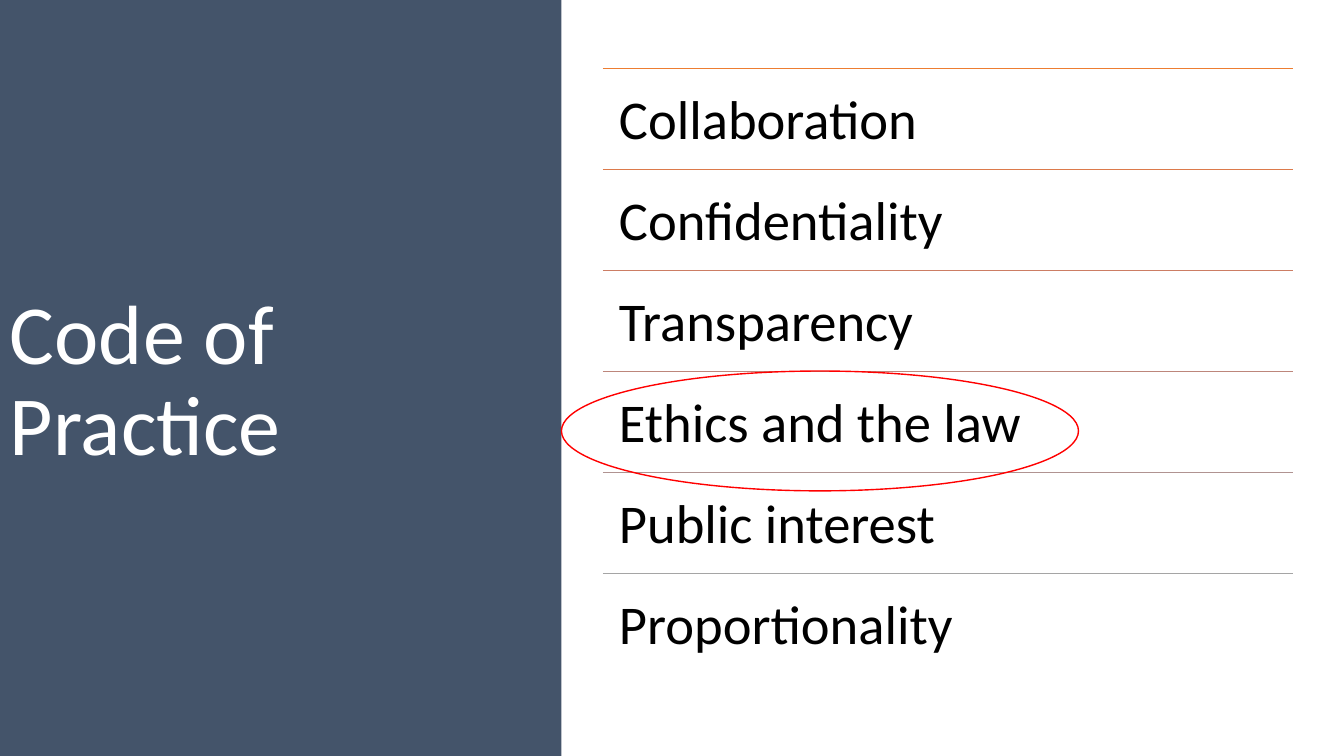
from lxml import etree
from pptx import Presentation
from pptx.dml.color import RGBColor
from pptx.enum.shapes import MSO_CONNECTOR, MSO_SHAPE
from pptx.enum.text import MSO_ANCHOR, PP_ALIGN
from pptx.oxml.ns import qn
from pptx.util import Cm, Pt

WHITE = RGBColor(0xFF, 0xFF, 0xFF)
BLACK = RGBColor(0x00, 0x00, 0x00)
SLATE = RGBColor(0x44, 0x54, 0x6A)
RED = RGBColor(0xFF, 0x00, 0x00)

RECTANGLE = MSO_SHAPE.RECTANGLE
OVAL = MSO_SHAPE.OVAL
STRAIGHT = MSO_CONNECTOR.STRAIGHT
LEFT = PP_ALIGN.LEFT
TOP = MSO_ANCHOR.TOP
MIDDLE = MSO_ANCHOR.MIDDLE

FONT = "Calibri"
TITLE = "Code of Practice"
PRINCIPLES = [
    ("Collaboration", RGBColor(0xED, 0x7D, 0x31)),
    ("Confidentiality", RGBColor(0xDC, 0x7A, 0x4B)),
    ("Transparency", RGBColor(0xCC, 0x7D, 0x64)),
    ("Ethics and the law", RGBColor(0xBD, 0x86, 0x7B)),
    ("Public interest", RGBColor(0xB0, 0x93, 0x91)),
    ("Proportionality", RGBColor(0xA5, 0xA5, 0xA5)),
]

PANEL_WIDTH, PANEL_HEIGHT = Cm(14.15), Cm(19.3)
LIST_LEFT, LIST_TOP, LIST_WIDTH = Cm(15.19), Cm(1.73), Cm(17.4)
ROW_HEIGHT = Cm(2.545)
ROW_INSET = Cm(0.41)
RING_TOP, RING_WIDTH, RING_HEIGHT = Cm(9.35), Cm(13.03), Cm(3.02)


def write_text(shape, text, size, color, anchor):
    frame = shape.text_frame
    frame.word_wrap = True
    frame.vertical_anchor = anchor
    paragraph = frame.paragraphs[0]
    paragraph.text = text
    paragraph.alignment = LEFT
    paragraph.font.name = FONT
    paragraph.font.size = Pt(size)
    paragraph.font.color.rgb = color
    return frame


def add_title_panel(slide):
    panel = slide.shapes.add_shape(RECTANGLE, 0, 0, PANEL_WIDTH, PANEL_HEIGHT)
    panel.shadow.inherit = False
    panel.fill.solid()
    panel.fill.fore_color.rgb = SLATE
    panel.line.fill.background()
    frame = write_text(panel, TITLE, 60, WHITE, MIDDLE)
    frame.paragraphs[0].line_spacing = 0.9


def add_principle(slide, text, color, top):
    rule = slide.shapes.add_connector(
        STRAIGHT, LIST_LEFT, top, LIST_LEFT + LIST_WIDTH, top)
    rule.line.color.rgb = color
    rule.line.width = Pt(1)
    etree.SubElement(rule.element.spPr, qn("a:effectLst"))

    box = slide.shapes.add_textbox(LIST_LEFT, top, LIST_WIDTH, ROW_HEIGHT)
    frame = write_text(box, text, 39, BLACK, TOP)
    frame.margin_left = frame.margin_right = ROW_INSET
    frame.margin_top = frame.margin_bottom = ROW_INSET


def add_highlight_ring(slide):
    ring = slide.shapes.add_shape(
        OVAL, PANEL_WIDTH, RING_TOP, RING_WIDTH, RING_HEIGHT)
    ring.shadow.inherit = False
    ring.fill.background()
    ring.line.color.rgb = RED
    ring.line.width = Pt(1)


def main():
    presentation = Presentation()
    presentation.slide_width = Cm(33.87)
    presentation.slide_height = Cm(19.05)
    slide = presentation.slides.add_slide(presentation.slide_layouts[6])

    add_title_panel(slide)
    for row, (text, color) in enumerate(PRINCIPLES):
        add_principle(slide, text, color, LIST_TOP + row * ROW_HEIGHT)
    add_highlight_ring(slide)
    presentation.save("out.pptx")


if __name__ == "__main__":
    main()
